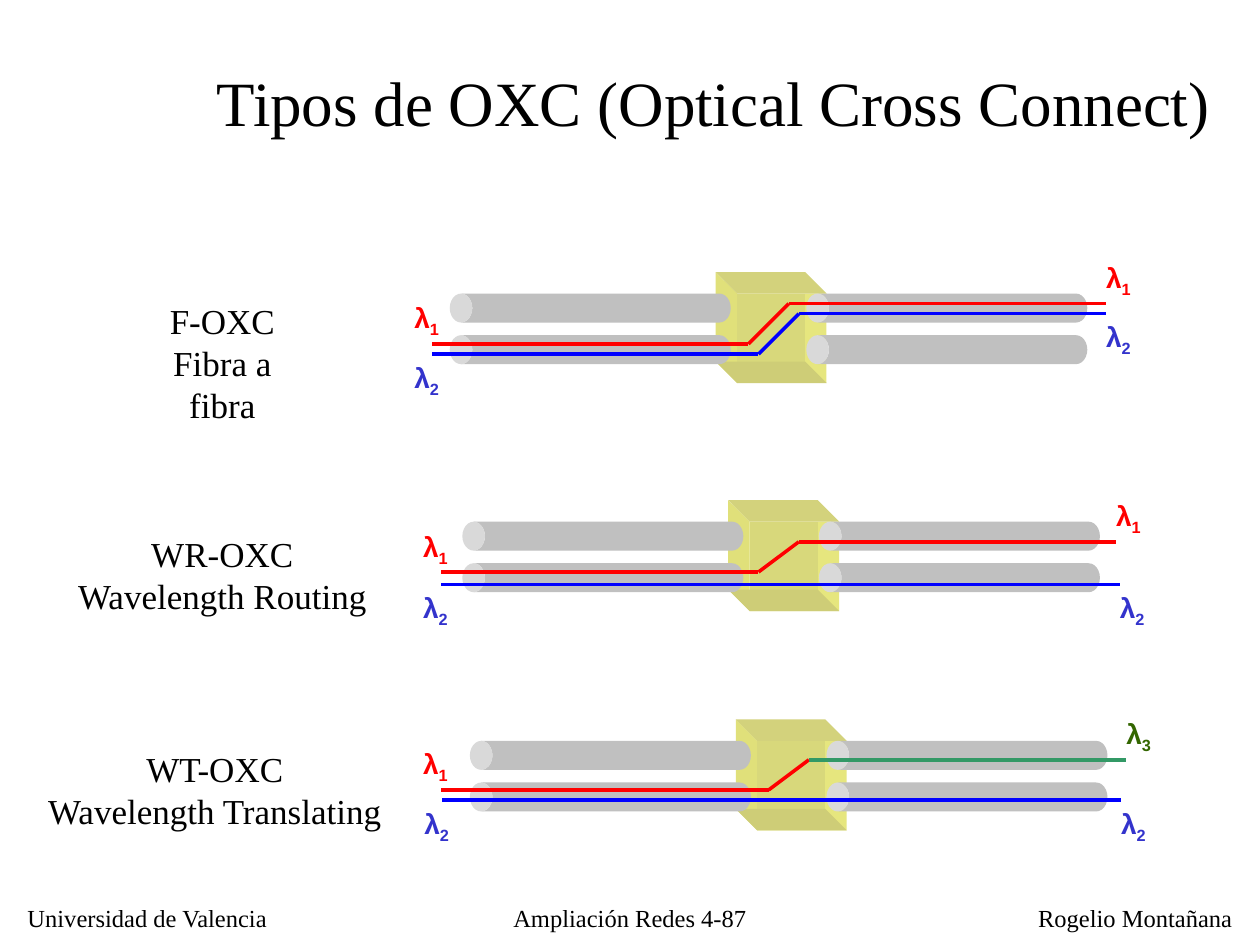
import pptx
import pptx.util
import pptx.dml.color
import pptx.enum.shapes
import pptx.enum.text
from dataclasses import dataclass
from lxml import etree
from pptx.util import Inches

SHAPE = pptx.enum.shapes.MSO_SHAPE
ALIGN = pptx.enum.text.PP_ALIGN
ANCHOR = pptx.enum.text.MSO_ANCHOR


@dataclass(frozen=True)
class Theme:
    serif: str = "Times New Roman"
    sans: str = "Arial"
    title: int = 36
    label: int = 20
    tag: int = 16
    footer: int = 14
    line: int = 2
    text: str = "000000"
    fiber: str = "C0C0C0"
    front: str = "E6E67E"
    side: str = "E0E07A"
    top: str = "D3D27C"
    bottom: str = "CECD77"
    inner: str = "D8D87B"
    red: str = "FF0000"
    blue: str = "0000FF"
    green: str = "339966"
    blue_tag: str = "3333CC"
    green_tag: str = "336600"


T = Theme()


def rgb(value):
    return pptx.dml.color.RGBColor.from_string(value)


def style(p, size, color=T.text, name=T.serif, bold=False, align=ALIGN.LEFT):
    p.alignment = align
    p.font.size = pptx.util.Pt(size)
    p.font.name = name
    p.font.bold = bold
    p.font.color.rgb = rgb(color)


def add_text(s, box, lines, size, align=ALIGN.LEFT, wrap=False):
    tb = s.shapes.add_textbox(*map(Inches, box))
    tf = tb.text_frame
    tf.word_wrap = wrap
    tf.text = "\n".join(lines)
    for p in tf.paragraphs:
        style(p, size, align=align)


def paint(sp, color):
    sp.shadow.inherit = False
    sp.fill.solid()
    sp.fill.fore_color.rgb = rgb(color)
    sp.line.fill.background()


def add_title(s, box, text):
    sp = s.shapes.title
    sp.left, sp.top, sp.width, sp.height = map(Inches, box)
    tf = sp.text_frame
    tf.word_wrap = False
    tf.vertical_anchor = ANCHOR.MIDDLE
    tf.text = text
    style(tf.paragraphs[0], T.title)


def add_switch(s, x, y, size=0.71, depth=0.17):
    paint(s.shapes.add_shape(SHAPE.RECTANGLE, *map(Inches, (x, y, size, size))), T.front)
    back = size - depth
    faces = [
        (T.side, [(0, 0), (0, size), (-depth, back), (-depth, -depth)]),
        (T.top, [(-depth, -depth), (back, -depth), (size, 0), (0, 0)]),
        (T.inner, [(0, 0), (back, 0), (back, back), (0, back)]),
        (T.bottom, [(-depth, back), (back, back), (size, size), (0, size)]),
    ]
    for color, points in faces:
        points = [(Inches(x + dx), Inches(y + dy)) for dx, dy in points]
        fb = s.shapes.build_freeform(*points[0])
        fb.add_line_segments(points[1:])
        paint(fb.convert_to_shape(), color)


def add_fiber(s, x, y, length=2.23, thick=0.23):
    shift = (length - thick) / 2
    sp = s.shapes.add_shape(
        SHAPE.CAN, *map(Inches, (x + shift, y - shift, thick, length)))
    sp.rotation = 270
    sp.adjustments[0] = 0.78
    paint(sp, T.fiber)


def add_line(s, start, end, color):
    c = s.shapes.add_connector(
        pptx.enum.shapes.MSO_CONNECTOR.STRAIGHT, *map(Inches, start + end))
    c.line.color.rgb = rgb(color)
    c.line.width = pptx.util.Pt(T.line)
    etree.SubElement(c._element.spPr, pptx.oxml.ns.qn("a:effectLst"))


def add_tag(s, x, y, number, color):
    tb = s.shapes.add_textbox(*map(Inches, (x, y, 0.41, 0.37)))
    tb.text_frame.word_wrap = False
    p = tb.text_frame.paragraphs[0]
    style(p, T.tag, color, T.sans, True)
    p.add_run().text = "λ"
    r = p.add_run()
    r.text = number
    r.font._element.set("baseline", "-25000")


def add_oxc(s, x, y, upper, lower, exit_tag=("1", T.red), exit_color=T.red):
    add_switch(s, x, y)
    for dx in (-2.28, 0.55):
        for dy in (0, 0.33):
            add_fiber(s, x + dx, y + dy)
    tags = [
        (upper, -0.39, ("1", T.red), exit_tag, T.red, exit_color),
        (lower, 0, ("2", T.blue_tag), ("2", T.blue_tag), T.blue, T.blue),
    ]
    for route, rise, tag_in, tag_out, color, last in tags:
        points = [(x + dx, y + dy) for dx, dy in route]
        pairs = list(zip(points, points[1:]))
        for start, end in pairs[:-1]:
            add_line(s, start, end, color)
        add_line(s, *pairs[-1], last)
        (x1, y1), (x2, y2) = points[0], points[-1]
        add_tag(s, x1 - 0.24, y1 + rise, *tag_in)
        add_tag(s, x2 - 0.1, y2 + rise, *tag_out)


def add_footer(s, y):
    add_text(s, (0.12, y, 2.13, 0.33), ["Universidad de Valencia"], T.footer)
    add_text(s, (3.9, y, 2.2, 0.31), ["Ampliación Redes 4-87"], T.footer, ALIGN.CENTER, True)
    add_text(s, (8.14, y, 1.74, 0.33), ["Rogelio Montañana"], T.footer)


def main():
    prs = pptx.Presentation()
    prs.slide_width, prs.slide_height = Inches(10), Inches(7.5)
    s = prs.slides.add_slide(prs.slide_layouts[5])
    add_title(s, (1.62, 0.45, 8.1, 0.7), "Tipos de OXC (Optical Cross Connect)")

    labels = [
        ((0.98, 2.33, 1.57, 0.77), ["F-OXC", "Fibra a fibra"], True),
        ((0.51, 4.18, 2.51, 0.77), ["WR-OXC", "Wavelength Routing"], False),
        ((0.27, 5.88, 2.87, 0.77), ["WT-OXC", "Wavelength Translating"], False),
    ]
    for box, lines, wrap in labels:
        add_text(s, box, lines, T.label, ALIGN.CENTER, wrap)

    add_oxc(s, 5.85, 2.33,
            [(-2.42, 0.4), (0.09, 0.4), (0.41, 0.08), (2.93, 0.08)],
            [(-2.42, 0.48), (0.17, 0.48), (0.49, 0.16), (2.93, 0.16)])
    add_oxc(s, 5.95, 4.14,
            [(-2.45, 0.4), (0.07, 0.4), (0.39, 0.16), (2.91, 0.16)],
            [(-2.45, 0.5), (2.94, 0.5)])
    add_oxc(s, 6.01, 5.88,
            [(-2.51, 0.39), (0.09, 0.39), (0.41, 0.15), (2.93, 0.15)],
            [(-2.5, 0.47), (2.89, 0.47)],
            ("3", T.green_tag), T.green)
    add_footer(s, 7.12)
    prs.save("out.pptx")


if __name__ == "__main__":
    main()
